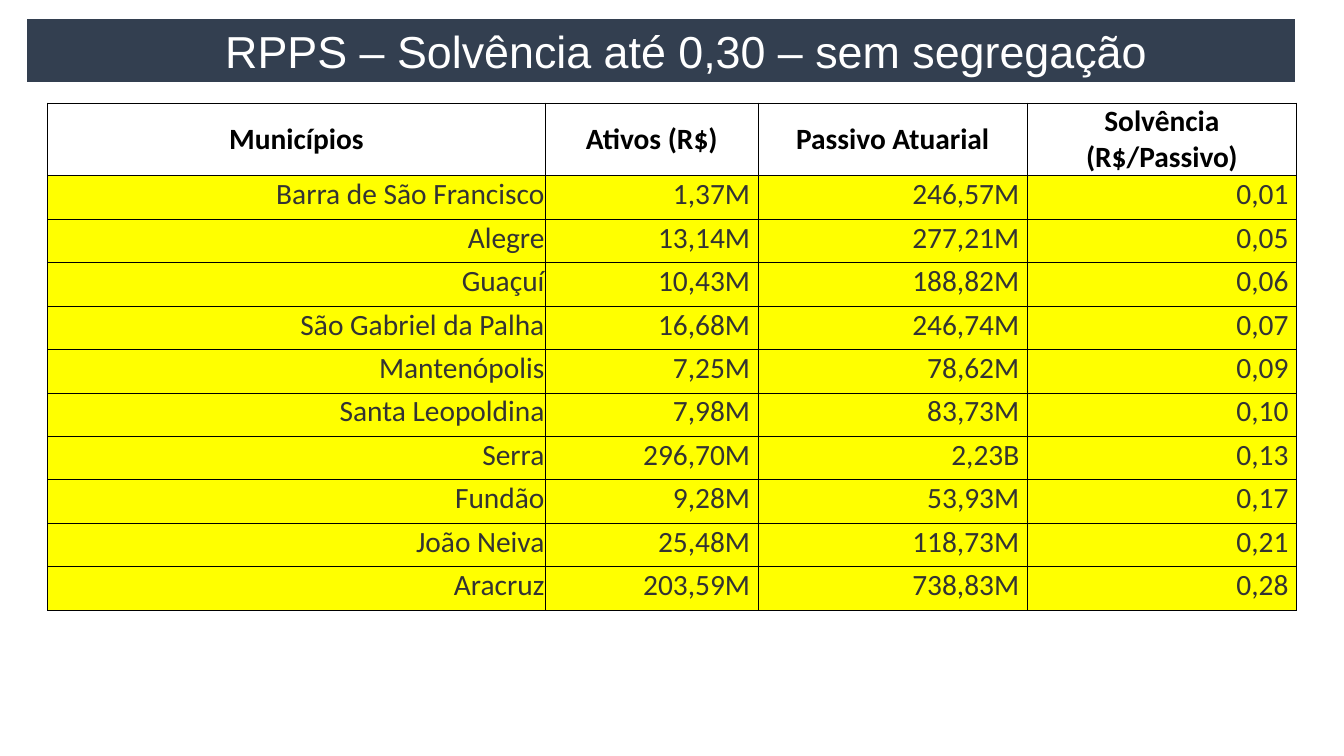
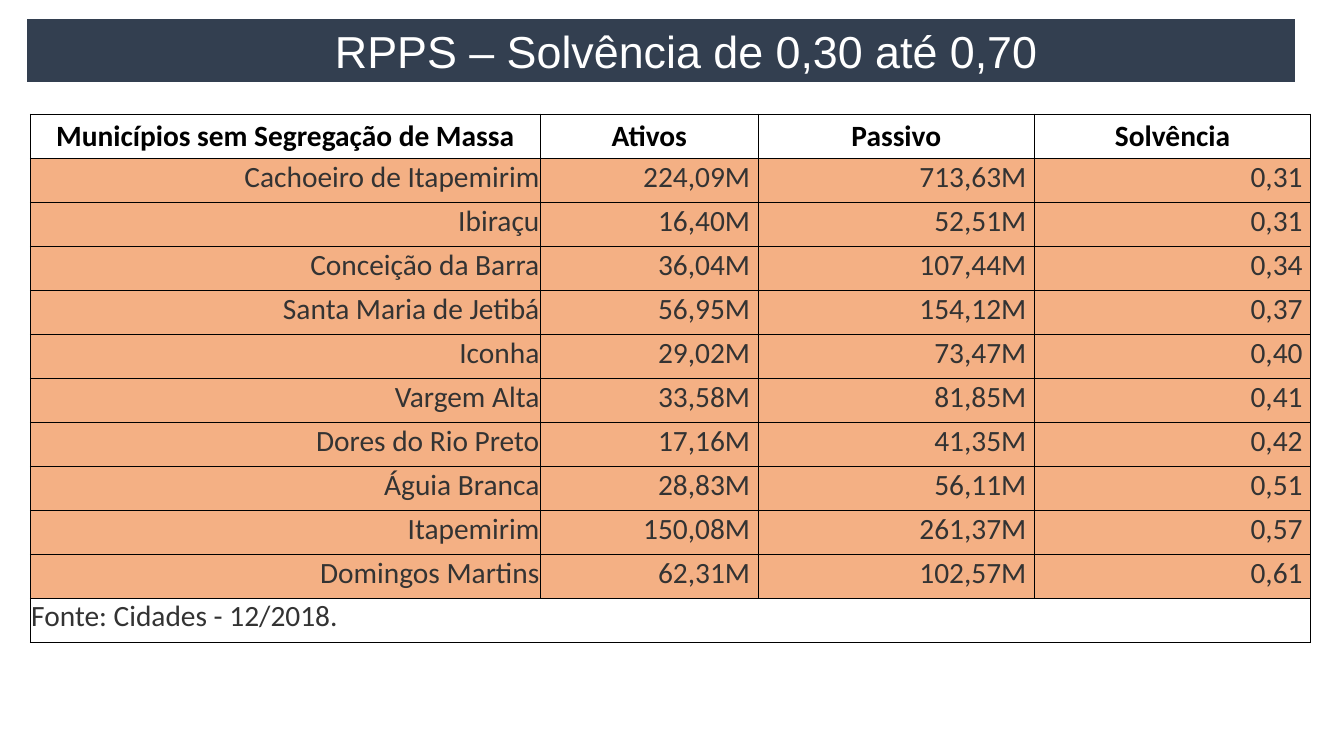
from pptx import Presentation
from pptx.dml.color import RGBColor
from pptx.enum.shapes import MSO_SHAPE
from pptx.enum.text import MSO_ANCHOR, PP_ALIGN
from pptx.oxml import parse_xml
from pptx.oxml.ns import nsdecls
from pptx.util import Pt

PX = 9144
COLORS = {
    "band": "333F50",
    "white": "FFFFFF",
    "black": "000000",
    "text": "333333",
    "low": "FFFF00",
    "medium": "F4B084",
}

LOW_HEADERS = ["Municípios", "Ativos (R$)", "Passivo Atuarial", "Solvência (R$/Passivo)"]
LOW_ROWS = [
    ["Barra de São Francisco", "1,37M", "246,57M", "0,01"],
    ["Alegre", "13,14M", "277,21M", "0,05"],
    ["Guaçuí", "10,43M", "188,82M", "0,06"],
    ["São Gabriel da Palha", "16,68M", "246,74M", "0,07"],
    ["Mantenópolis", "7,25M", "78,62M", "0,09"],
    ["Santa Leopoldina", "7,98M", "83,73M", "0,10"],
    ["Serra", "296,70M", "2,23B", "0,13"],
    ["Fundão", "9,28M", "53,93M", "0,17"],
    ["João Neiva", "25,48M", "118,73M", "0,21"],
    ["Aracruz", "203,59M", "738,83M", "0,28"],
]
MEDIUM_HEADERS = ["Municípios sem Segregação de Massa", "Ativos", "Passivo", "Solvência"]
MEDIUM_ROWS = [
    ["Cachoeiro de Itapemirim", "224,09M", "713,63M", "0,31"],
    ["Ibiraçu", "16,40M", "52,51M", "0,31"],
    ["Conceição da Barra", "36,04M", "107,44M", "0,34"],
    ["Santa Maria de Jetibá", "56,95M", "154,12M", "0,37"],
    ["Iconha", "29,02M", "73,47M", "0,40"],
    ["Vargem Alta", "33,58M", "81,85M", "0,41"],
    ["Dores do Rio Preto", "17,16M", "41,35M", "0,42"],
    ["Águia Branca", "28,83M", "56,11M", "0,51"],
    ["Itapemirim", "150,08M", "261,37M", "0,57"],
    ["Domingos Martins", "62,31M", "102,57M", "0,61"],
]


def px(value):
    return round(value * PX)


def rgb(name):
    return RGBColor.from_string(COLORS[name])


def write_text(frame, text, size=21, font="Calibri", color="text", bold=False,
               align=PP_ALIGN.RIGHT):
    frame.word_wrap = True
    paragraph = frame.paragraphs[0]
    paragraph.alignment = align
    run = paragraph.add_run()
    run.text = text
    run.font.size = Pt(size)
    run.font.name = font
    run.font.bold = bold
    run.font.color.rgb = rgb(color)


def add_title_band(slide, title):
    band = slide.shapes.add_shape(MSO_SHAPE.RECTANGLE, px(26), px(18), px(1260), px(64))
    band.shadow.inherit = False
    band.fill.solid()
    band.fill.fore_color.rgb = rgb("band")
    band.line.color.rgb = rgb("white")
    band.line.width = Pt(1.5)
    band.text_frame.margin_left = px(60)
    band.text_frame.vertical_anchor = MSO_ANCHOR.MIDDLE
    write_text(band.text_frame, title, size=32, font="Arial", color="white",
               align=PP_ALIGN.CENTER)


def add_borders(cell):
    properties = cell._tc.get_or_add_tcPr()
    for side in ("lnL", "lnR", "lnT", "lnB"):
        properties.append(parse_xml(
            f'<a:{side} {nsdecls("a")} w="{Pt(0.5)}"><a:solidFill>'
            f'<a:srgbClr val="{COLORS["black"]}"/></a:solidFill></a:{side}>'))


def format_cell(cell, fill, right=1, anchor=MSO_ANCHOR.TOP):
    add_borders(cell)
    cell.fill.solid()
    cell.fill.fore_color.rgb = rgb(fill)
    cell.margin_left = cell.margin_top = px(1)
    cell.margin_right = px(right)
    cell.margin_bottom = 0
    cell.vertical_anchor = anchor


def add_solvency_table(slide, left, top, widths, height, header_height, headers, rows,
                       fill, source=None):
    row_count = 1 + len(rows) + (source is not None)
    table = slide.shapes.add_table(row_count, len(headers), px(left), px(top),
                                   px(sum(widths)), px(height)).table
    table.first_row = table.horz_banding = False
    for column, width in zip(table.columns, widths):
        column.width = px(width)
    for row in table.rows:
        row.height = px((height - header_height) / (row_count - 1))
    table.rows[0].height = px(header_height)

    for index, header in enumerate(headers):
        cell = table.cell(0, index)
        format_cell(cell, "white", anchor=MSO_ANCHOR.MIDDLE)
        write_text(cell.text_frame, header, color="black", bold=True, align=PP_ALIGN.CENTER)
    for row_index, values in enumerate(rows, start=1):
        for index, value in enumerate(values):
            cell = table.cell(row_index, index)
            format_cell(cell, fill, right=8 if index else 1)
            write_text(cell.text_frame, value)
    if source is not None:
        last = row_count - 1
        for index in range(len(headers)):
            format_cell(table.cell(last, index), "white")
        table.cell(last, 0).merge(table.cell(last, len(headers) - 1))
        write_text(table.cell(last, 0).text_frame, source, align=PP_ALIGN.LEFT)


def add_titled_slide(presentation, title):
    slide = presentation.slides.add_slide(presentation.slide_layouts[6])
    add_title_band(slide, title)
    return slide


def main():
    presentation = Presentation()
    presentation.slide_width = px(1333)
    presentation.slide_height = px(750)

    slide = add_titled_slide(presentation, "RPPS – Solvência até 0,30 – sem segregação")
    add_solvency_table(slide, 47, 102, [494, 211, 267, 267], 503, 72,
                       LOW_HEADERS, LOW_ROWS, "low")

    slide = add_titled_slide(presentation, "RPPS – Solvência de 0,30 até 0,70")
    add_solvency_table(slide, 30, 113, [506, 216, 274, 274], 524, 44,
                       MEDIUM_HEADERS, MEDIUM_ROWS, "medium",
                       source="Fonte: Cidades - 12/2018.")

    presentation.save("out.pptx")


if __name__ == "__main__":
    main()
